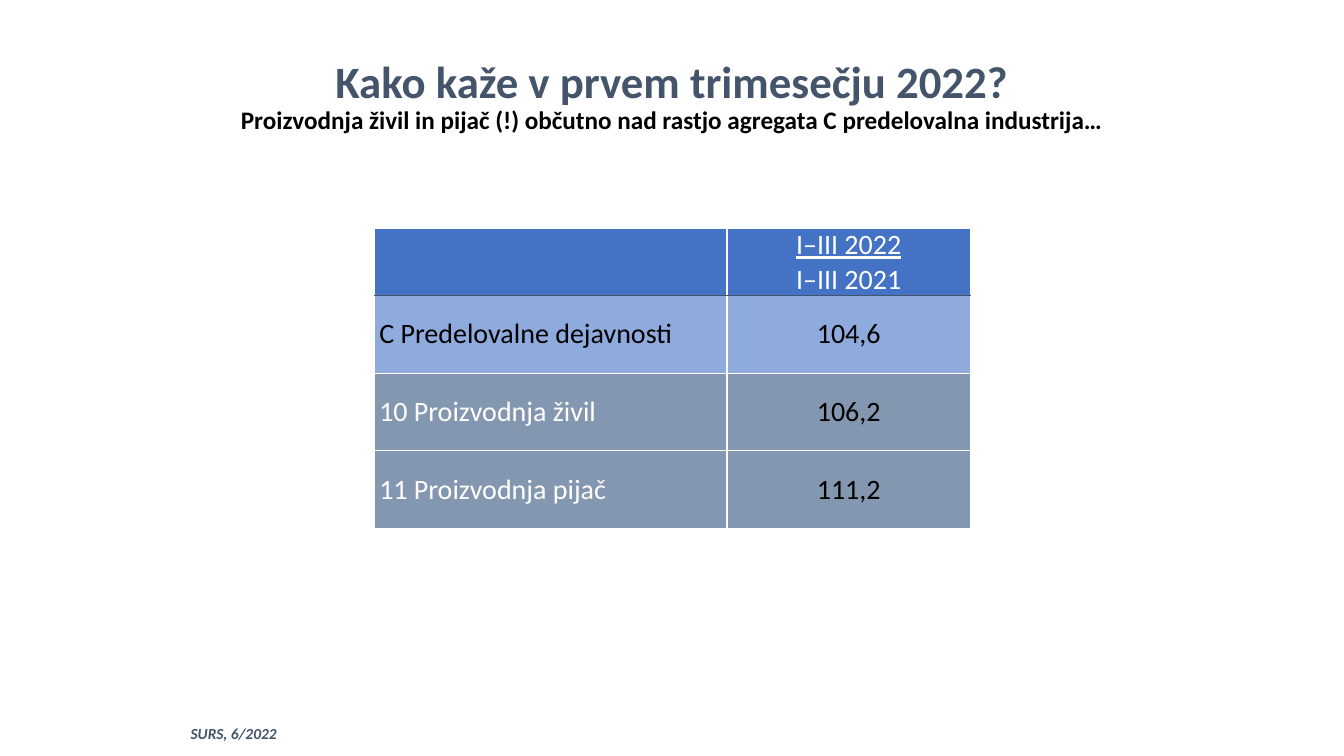
import pptx
import pptx.util
import pptx.dml.color
import pptx.enum.shapes
import pptx.enum.text
import pptx.oxml
import pptx.oxml.ns

Pt = pptx.util.Pt
RGB = pptx.dml.color.RGBColor
ALIGN = pptx.enum.text.PP_ALIGN
ANCHOR = pptx.enum.text.MSO_ANCHOR
FIT = pptx.enum.text.MSO_AUTO_SIZE

WHITE = RGB(0xFF, 0xFF, 0xFF)
BLACK = RGB(0, 0, 0)
SLATE = RGB(0x44, 0x54, 0x6A)
BLUE = RGB(0x44, 0x72, 0xC4)
LIGHT = RGB(0x8F, 0xAA, 0xDC)
GRAY = RGB(0x84, 0x97, 0xB0)


class Sheet:
    """Style and current slide, with one method per kind of element."""

    font = "Calibri"

    def __init__(self, deck):
        self.slide = deck.slides.add_slide(deck.slide_layouts[5])

    def format(self, item, form):
        for name, value in form.items():
            setattr(item, name, value)

    def text(self, frame, lines, align=ALIGN.LEFT, space=1.0):
        """Fill one paragraph; each line is a (text, colour, format) triple."""
        para = frame.paragraphs[0]
        self.format(para, {"alignment": align, "line_spacing": space})
        for i, (text, color, style) in enumerate(lines):
            if i:
                para.add_line_break()
            run = para.add_run()
            run.text = text
            run.font.color.rgb = color
            self.format(run.font, {"name": self.font, **style})

    def title(self, box, lines):
        shape = self.slide.shapes.title
        sides = ("left", "top", "width", "height")
        self.format(shape, dict(zip(sides, map(Pt, box))))
        self.format(shape.text_frame, {
            "word_wrap": True, "auto_size": FIT.NONE,
            "vertical_anchor": ANCHOR.BOTTOM})
        self.text(shape.text_frame, lines, ALIGN.CENTER, 0.9)

    def label(self, box, lines):
        kind = pptx.enum.shapes.MSO_SHAPE.RECTANGLE
        shape = self.slide.shapes.add_shape(kind, *map(Pt, box))
        shape.shadow.inherit = False
        shape.fill.solid()
        shape.fill.fore_color.rgb = WHITE
        shape.line.fill.background()
        self.format(shape.text_frame, {
            "word_wrap": True, "auto_size": FIT.SHAPE_TO_FIT_TEXT,
            "vertical_anchor": ANCHOR.TOP})
        self.text(shape.text_frame, lines)

    def edge(self, cell, side, color):
        names = pptx.oxml.ns.nsdecls("a")
        cell._tc.get_or_add_tcPr().append(pptx.oxml.parse_xml(
            f'<a:ln{side} {names} w="{Pt(1)}"><a:solidFill>'
            f'<a:srgbClr val="{color}"/></a:solidFill></a:ln{side}>'))

    def table(self, spot, cols, rows, fills, data):
        frame = self.slide.shapes.add_table(
            len(rows), len(cols), *map(Pt, (*spot, sum(cols), sum(rows))))
        table = frame.table
        for col, width in zip(table.columns, cols):
            col.width = Pt(width)
        for row, height in zip(table.rows, rows):
            row.height = Pt(height)
        form = {"margin_left": Pt(3.6), "margin_right": Pt(3.6),
                "margin_top": 0, "margin_bottom": 0,
                "vertical_anchor": ANCHOR.MIDDLE}
        for r, texts in enumerate(data):
            for c, lines in enumerate(texts):
                cell = table.cell(r, c)
                self.format(cell, form)
                # A dark rule parts the header from the body
                for side in "LRTB":
                    dark = (r, side) in ((0, "B"), (1, "T"))
                    self.edge(cell, side, SLATE if dark else WHITE)
                cell.fill.solid()
                cell.fill.fore_color.rgb = fills[r]
                self.text(cell.text_frame, lines,
                          ALIGN.CENTER if c else ALIGN.LEFT)


def main():
    deck = pptx.Presentation()
    deck.slide_width, deck.slide_height = Pt(960), Pt(540)
    sheet = Sheet(deck)

    # Title with subtitle line
    sheet.title((163.5, 21.6, 633, 78.5), [
        ("Kako kaže v prvem trimesečju 2022?", SLATE,
         {"size": Pt(32), "bold": True}),
        ("Proizvodnja živil in pijač (!) občutno nad rastjo agregata C "
         "predelovalna industrija…", BLACK, {"size": Pt(18), "bold": True})])

    # Source label
    sheet.label((129, 514, 90, 21), [
        ("SURS, 6/2022", SLATE,
         {"size": Pt(11), "bold": True, "italic": True})])

    # Index table
    size = {"size": Pt(20), "bold": False}
    head = [("I–III 2022", WHITE, {**size, "underline": True}),
            ("I–III 2021", WHITE, size)]
    items = [("C Predelovalne dejavnosti", BLACK, "104,6"),
             ("10 Proizvodnja živil", WHITE, "106,2"),
             ("11 Proizvodnja pijač", WHITE, "111,2")]
    body = [[[(name, color, size)], [(value, BLACK, size)]]
            for name, color, value in items]
    sheet.table((267.3, 163), (252, 174), (42, 55.5, 55.5, 55.5),
                (BLUE, LIGHT, GRAY, GRAY), [[[], head], *body])

    deck.save("out.pptx")


if __name__ == "__main__":
    main()
